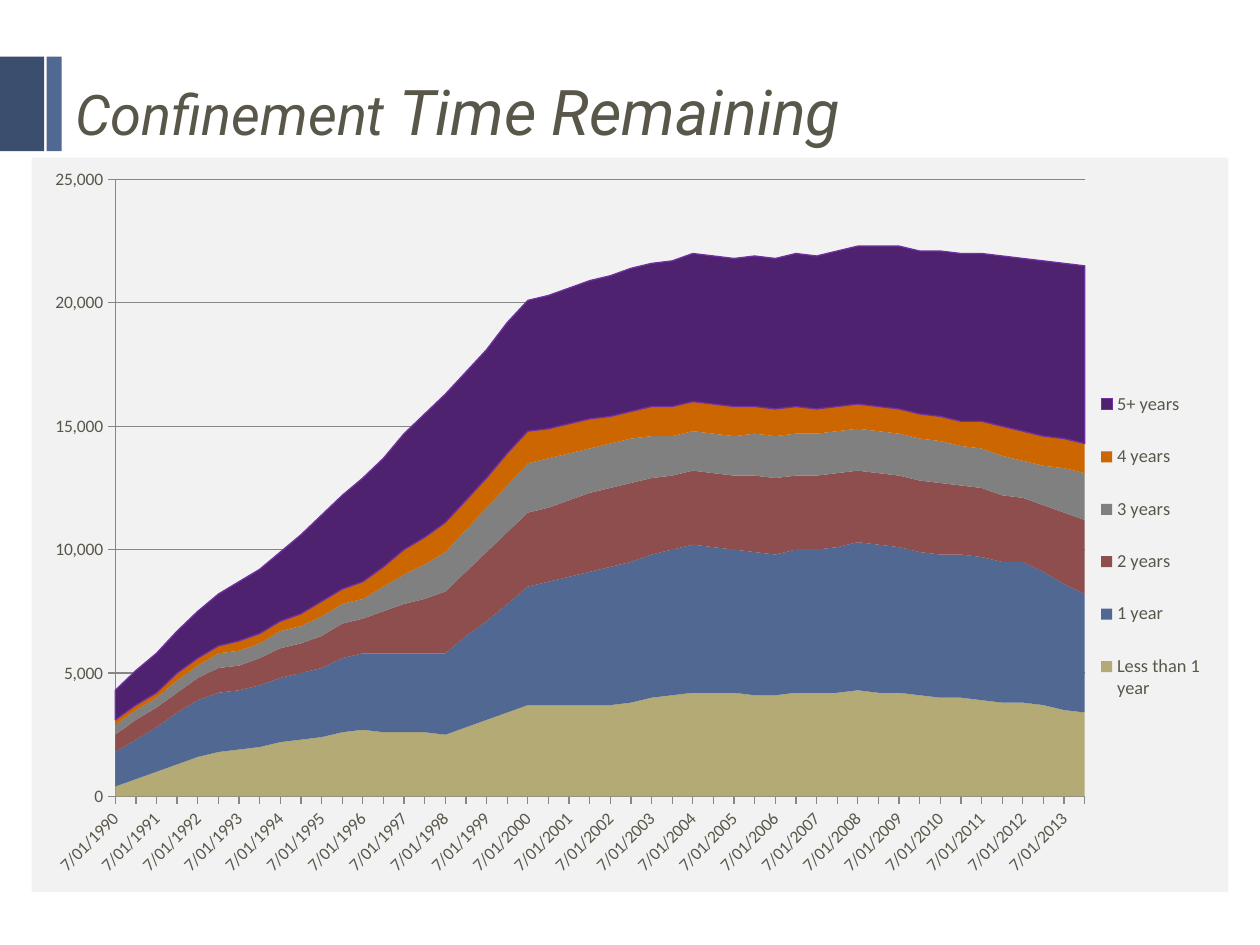
from lxml import etree
from pptx import Presentation, util as u
from pptx.chart.data import CategoryChartData
from pptx.dml.color import RGBColor
from pptx.enum import chart as ch, shapes, text
from pptx.oxml import parse_xml
from pptx.oxml.ns import nsdecls, qn

COLORS = {"navy": "3C4E6E", "blue": "506892", "text": "595749", "white": "FFFFFF",
          "panel": "F2F2F2", "grid": "868686", "outline": "7030A0",
          "Less than 1 year": "B3AA75", "1 year": "506892", "2 years": "8E4E4E",
          "3 years": "808080", "4 years": "CC6600", "5+ years": "4F2270"}


def paint(fill, color):
    fill.solid()
    fill.fore_color.rgb = RGBColor.from_string(COLORS[color])


def set_layout(parent, index, inner, **box):
    """Place a chart part by fractions of the chart area."""
    for old in parent.findall(qn("c:layout")):
        parent.remove(old)
    target = '<c:layoutTarget val="inner"/>' if inner else ""
    modes = '<c:xMode val="edge"/><c:yMode val="edge"/>'
    sizes = "".join(f'<c:{k} val="{v}"/>' for k, v in box.items())
    parent.insert(index, parse_xml(
        f'<c:layout {nsdecls("c")}><c:manualLayout>{target}{modes}{sizes}'
        '</c:manualLayout></c:layout>'))


prs = Presentation()
prs.slide_width, prs.slide_height = u.Inches(10), u.Inches(7.5)
s = prs.slides.add_slide(prs.slide_layouts[6])

# Accent bars at the left edge
for left, width, color in ((0, 0.35, "navy"), (0.37, 0.12, "blue")):
    sp = s.shapes.add_shape(shapes.MSO_SHAPE.RECTANGLE, u.Inches(left), u.Inches(0.45),
                            u.Inches(width), u.Inches(0.75))
    sp.shadow.inherit = False
    paint(sp.fill, color)
    sp.line.fill.background()

# Title on a half-transparent white panel
sp = s.shapes.add_textbox(u.Inches(0.5), u.Inches(0.5), u.Inches(8.5), u.Inches(0.75))
paint(sp.fill, "white")
white = sp._element.spPr.find(qn("a:solidFill"))[0]
etree.SubElement(white, qn("a:alpha")).set("val", "50000")
tf = sp.text_frame
tf.word_wrap = True
tf.vertical_anchor = text.MSO_ANCHOR.MIDDLE
p = tf.paragraphs[0]
for words, size in (("Confinement", 32), (" Time Remaining", 36)):
    r = p.add_run()
    r.text = words
    r.font.size, r.font.name, r.font.italic = u.Pt(size), "Roboto", True
    r.font.color.rgb = RGBColor.from_string(COLORS["text"])

# Chart data: hundreds at every fourth half-year and the last, straight lines between
dates = [f"{day}/{year}" for year in range(1990, 2014) for day in ("7/01", "12/31")]
last = len(dates) - 1
STEP = 4
hundreds = {
    "Less than 1 year": [4, 16, 22, 27, 25, 37, 37, 42, 41, 43, 40, 38, 34],
    "1 year": [14, 23, 26, 31, 33, 48, 56, 60, 57, 60, 58, 57, 48],
    "2 years": [7, 9, 12, 14, 25, 30, 32, 30, 31, 29, 29, 26, 30],
    "3 years": [4, 5, 7, 8, 16, 20, 18, 16, 17, 17, 17, 15, 19],
    "4 years": [2, 3, 4, 7, 12, 13, 11, 12, 11, 10, 10, 12, 12],
    "5+ years": [12, 19, 28, 42, 52, 53, 57, 60, 61, 64, 67, 70, 72],
}
data = CategoryChartData(number_format="#,##0")
data.categories = dates
for name, knots in hundreds.items():
    values = []
    for i in range(last):
        k, offset = divmod(i, STEP)
        span = min(STEP, last - k * STEP)
        values.append(100 * round(knots[k] + (knots[k + 1] - knots[k]) * offset / span))
    data.add_series(name, values + [100 * knots[-1]])

# Stacked area chart
chart = s.shapes.add_chart(ch.XL_CHART_TYPE.AREA_STACKED, u.Inches(0.25), u.Inches(1.25),
                           u.Inches(9.5), u.Inches(5.83), data).chart
chart.has_title = False
chart.font.size, chart.font.name = u.Pt(10), "Calibri"
chart.font.color.rgb = RGBColor.from_string(COLORS["text"])
plot = chart.plots[0]
plot.vary_by_categories = False
for ser in plot.series:
    paint(ser.format.fill, ser.name)
    ser.format.line.fill.background()
top = plot.series[-1].format.line
paint(top.fill, "outline")
top.width = u.Pt(0.75)

# Axes
cat, val = chart.category_axis, chart.value_axis
val.minimum_scale, val.maximum_scale, val.major_unit = 0, 25000, 5000
val.tick_labels.number_format = "#,##0"
val.tick_labels.number_format_is_linked = False
val.has_major_gridlines = True
cat.has_major_gridlines = False
for axis in (cat, val):
    axis.major_tick_mark = ch.XL_TICK_MARK.OUTSIDE
    axis.minor_tick_mark = ch.XL_TICK_MARK.NONE
for line in (cat.format.line, val.format.line, val.major_gridlines.format.line):
    paint(line.fill, "grid")
    line.width = u.Pt(0.75)
cat.tick_labels.font.size = u.Pt(10)
cat._element.find(qn("c:txPr")).find(qn("a:bodyPr")).set("rot", "-2700000")
no_multi = cat._element.find(qn("c:noMultiLvlLbl"))
skip = parse_xml(f'<c:tickLblSkip {nsdecls("c")} val="2"/>')
if no_multi is None:
    cat._element.append(skip)
else:
    no_multi.addprevious(skip)
cross = val._element.find(qn("c:crossBetween"))
if cross is not None:
    cross.set("val", "midCat")

# Legend and placement inside the chart
chart.has_legend = True
legend = chart.legend
legend.position = ch.XL_LEGEND_POSITION.RIGHT
legend.include_in_layout = False
legend.font.size = u.Pt(10.5)
set_layout(legend._element, 1, False, x=0.88, y=0.28, w=0.11, h=0.5)
plot_area = chart._chartSpace.chart.plotArea
set_layout(plot_area, 0, True, x=0.07, y=0.03, w=0.81, h=0.84)

# Light panel behind the chart
panel = parse_xml(f'<c:spPr {nsdecls("c", "a")}><a:solidFill><a:srgbClr val="{COLORS["panel"]}"/>'
                  '</a:solidFill><a:ln><a:noFill/></a:ln></c:spPr>')
chart._chartSpace.chart.addnext(panel)

prs.save("out.pptx")
